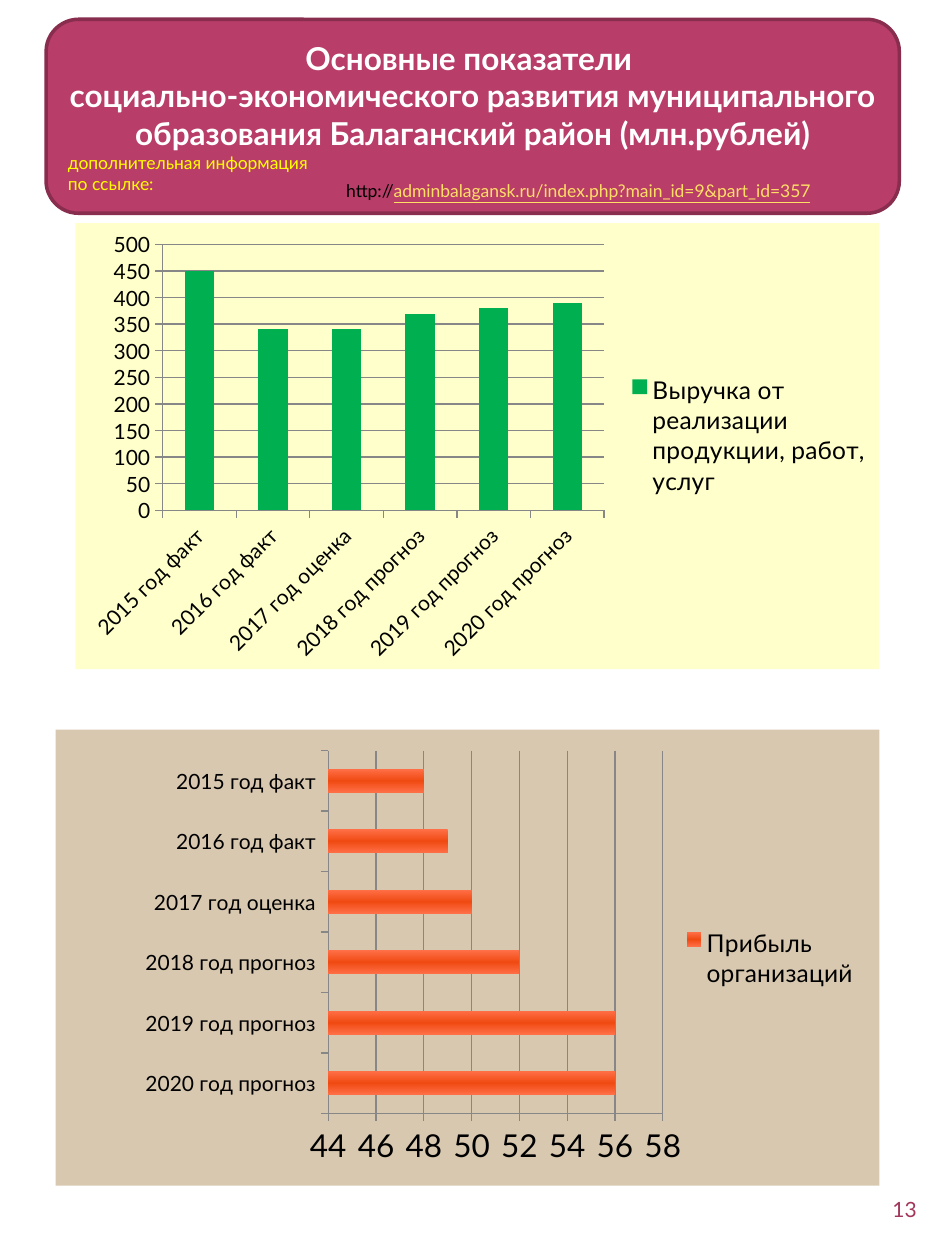
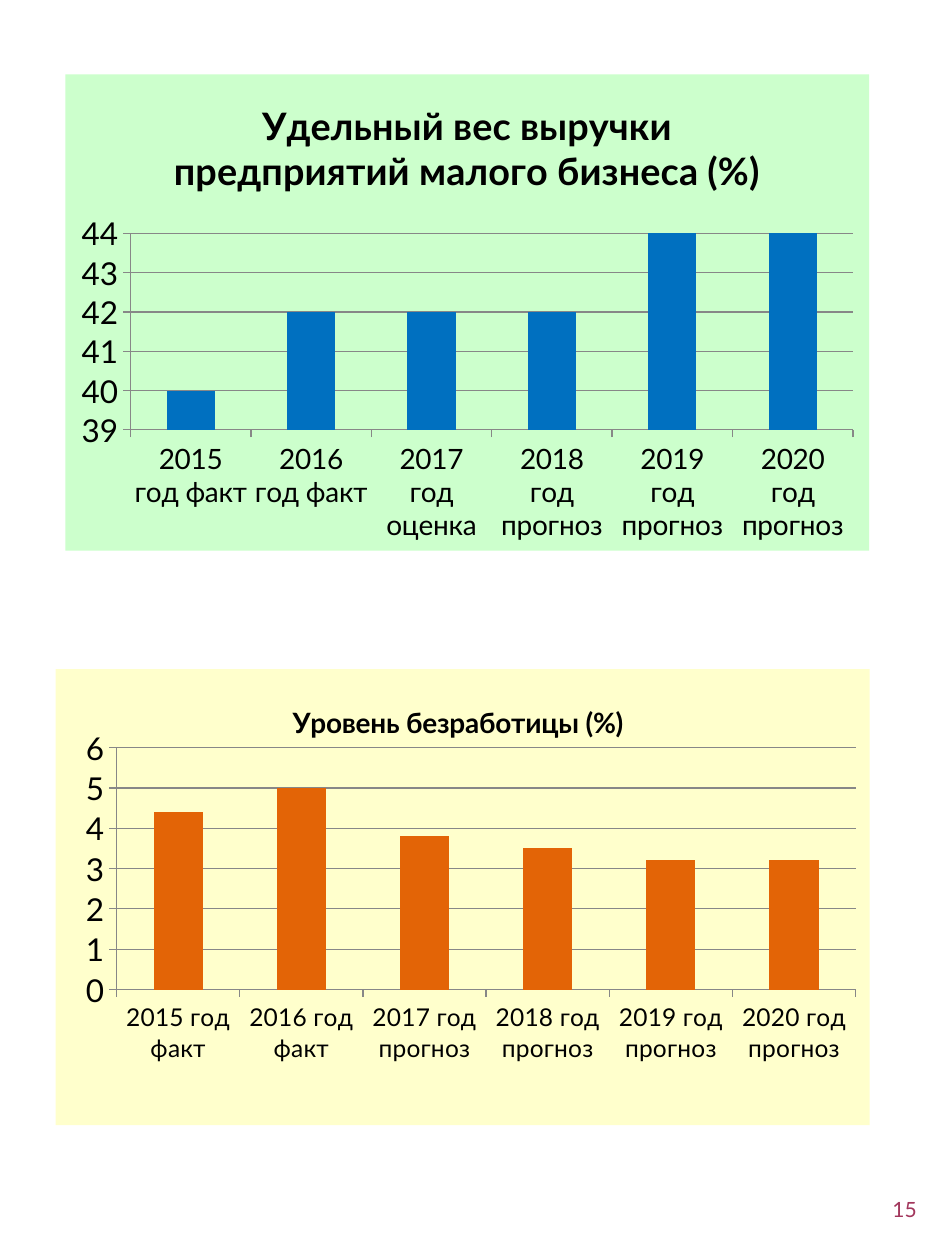
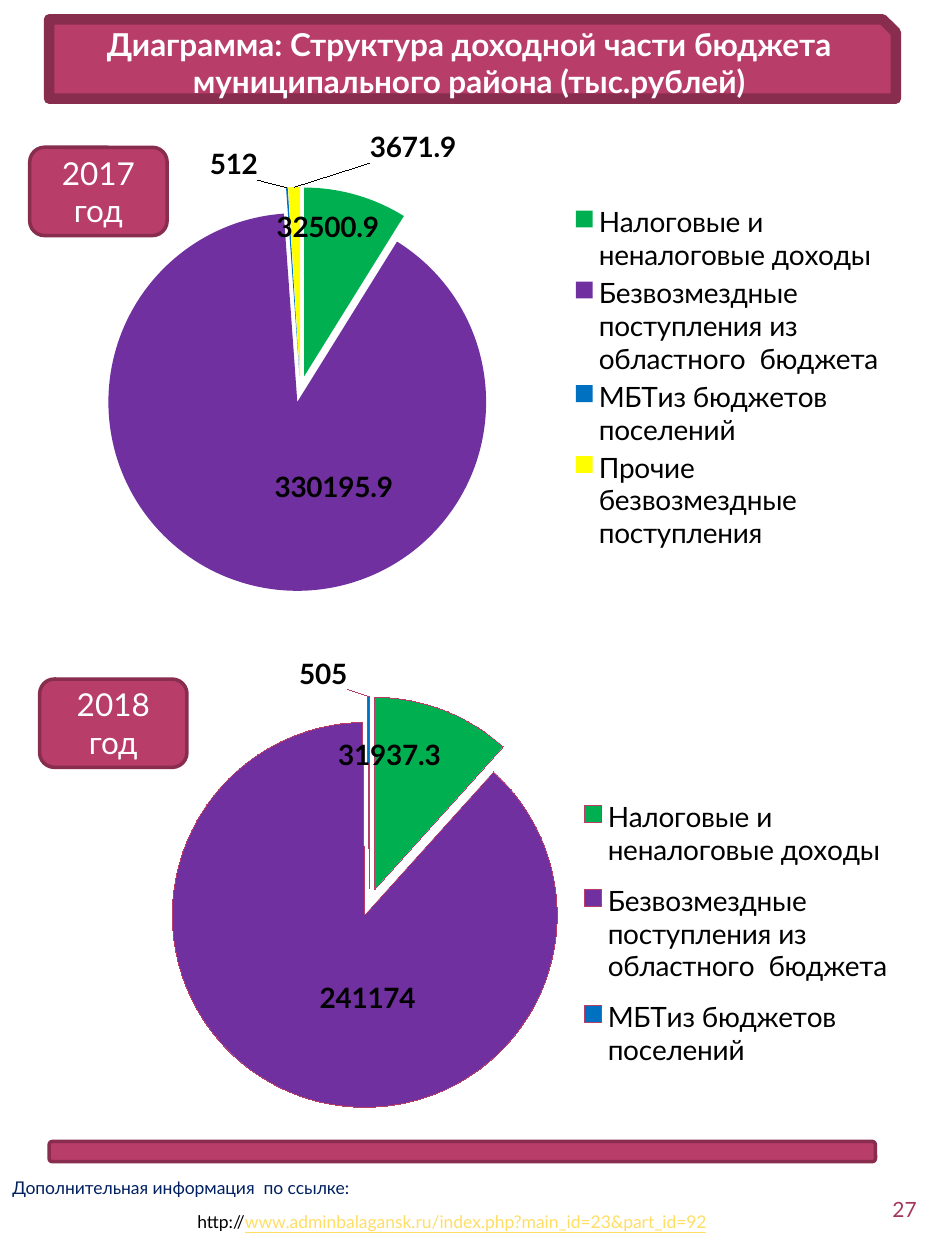
from copy import deepcopy
from dataclasses import dataclass

from lxml.etree import SubElement
from pptx import Presentation
from pptx.chart.data import CategoryChartData
from pptx.dml.color import RGBColor
from pptx.enum.chart import XL_CHART_TYPE as ChartType
from pptx.enum.chart import XL_LABEL_POSITION as LabelPosition
from pptx.enum.chart import XL_LEGEND_POSITION as LegendPosition
from pptx.enum.chart import XL_TICK_MARK as TickMark
from pptx.enum.shapes import MSO_SHAPE as Shape
from pptx.enum.text import MSO_ANCHOR as Anchor
from pptx.enum.text import PP_ALIGN as Align
from pptx.oxml import parse_xml
from pptx.oxml.ns import nsdecls, qn
from pptx.util import Cm, Pt


@dataclass(frozen=True)
class Theme:
    font: str = "Lato"
    berry: str = "B83D68"
    berry_dark: str = "882D4D"
    page_number: str = "A2365C"
    white: str = "FFFFFF"
    black: str = "000000"
    yellow: str = "FFFF00"
    link: str = "FFDE66"
    navy: str = "002060"
    grid: str = "878787"
    green: str = "00B050"
    blue: str = "0070C0"
    purple: str = "7030A0"
    orange: str = "E36406"
    flame: str = "F04A12"
    flame_light: str = "FF7048"
    cream: str = "FFFFCC"
    mint: str = "CCFFCC"
    sand: str = "D8C8B0"
    note_size: float = 10
    small_size: float = 12
    legend_size: float = 14
    label_size: float = 16
    heading_size: float = 18
    title_size: float = 21.6


THEME = Theme()
YEARS = ["2015 год факт", "2016 год факт", "2017 год оценка",
         "2018 год прогноз", "2019 год прогноз", "2020 год прогноз"]
INCOME_SOURCES = ["Налоговые и неналоговые доходы",
                  "Безвозмездные поступления из областного  бюджета",
                  "МБТиз бюджетов поселений",
                  "Прочие безвозмездные поступления"]
INCOME_COLORS = [THEME.green, THEME.purple, THEME.blue, THEME.yellow]


def rgb(color):
    return RGBColor.from_string(color)


def style_font(font, size, color=THEME.black, bold=False, underline=False):
    font.name = THEME.font
    font.size = Pt(size)
    font.bold = bold
    font.color.rgb = rgb(color)
    if underline:
        font.underline = True


def write(paragraph, text, align=Align.LEFT, **font_format):
    paragraph.alignment = align
    run = paragraph.add_run()
    run.text = text
    style_font(run.font, **font_format)


def place(element, index, percents, modes=("xMode", "yMode"), target=None):
    for layout in element.findall(qn("c:layout")):
        element.remove(layout)
    layout = SubElement(element, qn("c:layout"))
    manual = SubElement(layout, qn("c:manualLayout"))
    settings = [("layoutTarget", target)] if target else []
    settings += [(mode, "edge") for mode in modes]
    settings += [(name, f"{percent / 100:.4f}") for name, percent in zip("xywh", percents)]
    for name, value in settings:
        SubElement(manual, qn(f"c:{name}")).set("val", value)
    element.insert(index, layout)


class Deck:
    def __init__(self, theme):
        self.theme = theme
        self.presentation = Presentation()
        self.presentation.slide_width = Cm(19.05)
        self.presentation.slide_height = Cm(25.4)
        self.slide = None

    def add_slide(self, number):
        layout = self.presentation.slide_layouts[6]
        self.slide = self.presentation.slides.add_slide(layout)
        frame = self.text_box(17.16, 23.93, 1.57, 0.91)
        frame.vertical_anchor = Anchor.MIDDLE
        write(frame.paragraphs[0], str(number), align=Align.RIGHT,
              size=self.theme.small_size, color=self.theme.page_number)

    def text_box(self, left, top, width, height):
        box = self.slide.shapes.add_textbox(Cm(left), Cm(top), Cm(width), Cm(height))
        box.text_frame.word_wrap = True
        return box.text_frame

    def note(self, left, top, width, text, color):
        frame = self.text_box(left, top, width, 0.69)
        write(frame.paragraphs[0], text, size=self.theme.note_size, color=color)
        return frame.paragraphs[0]

    def address(self, left, top, width, text):
        paragraph = self.note(left, top, width, "http://", self.theme.black)
        write(paragraph, text, size=self.theme.note_size,
              color=self.theme.link, underline=True)

    def panel(self, left, top, width, height, lines=(), kind=Shape.ROUNDED_RECTANGLE,
              border=2, bold=False):
        shape = self.slide.shapes.add_shape(kind, Cm(left), Cm(top), Cm(width), Cm(height))
        shape.shadow.inherit = False
        shape.fill.solid()
        shape.fill.fore_color.rgb = rgb(self.theme.berry)
        shape.line.color.rgb = rgb(self.theme.berry_dark)
        shape.line.width = Pt(border)
        frame = shape.text_frame
        frame.word_wrap = True
        frame.vertical_anchor = Anchor.MIDDLE
        for index, line in enumerate(lines):
            paragraph = frame.add_paragraph() if index else frame.paragraphs[0]
            write(paragraph, line, align=Align.CENTER, bold=bold,
                  size=self.theme.heading_size, color=self.theme.white)
        return frame

    def chart(self, kind, box, categories, values, plot_box, name="Series 1", title=None,
              title_size=None, title_place=None, legend_size=None, legend_box=None,
              background=None):
        data = CategoryChartData()
        data.categories = categories
        data.add_series(name, values)
        chart = self.slide.shapes.add_chart(kind, *map(Cm, box), data).chart
        style_font(chart.font, self.theme.heading_size)
        chart.has_title = title is not None
        if title:
            write(chart.chart_title.text_frame.paragraphs[0], title,
                  align=Align.CENTER, size=title_size, bold=True)
        if title_place:
            place(chart.chart_title._element, 1, title_place)
        chart.has_legend = legend_size is not None
        if legend_size:
            chart.legend.position = LegendPosition.RIGHT
            chart.legend.include_in_layout = False
            style_font(chart.legend.font, legend_size)
            place(chart.legend._element, 1, legend_box)
        if background:
            properties = parse_xml(
                f'<c:spPr {nsdecls("c", "a")}><a:solidFill><a:srgbClr val="{background}"/>'
                "</a:solidFill><a:ln><a:noFill/></a:ln></c:spPr>")
            chart._chartSpace.find(qn("c:txPr")).addprevious(properties)
        place(chart._chartSpace.find(".//" + qn("c:plotArea")), 0, plot_box, target="inner")
        return chart

    def bars(self, box, categories, values, color, scale, category_size,
             value_size=THEME.heading_size, kind=ChartType.COLUMN_CLUSTERED,
             edge_color=None, rotation=None, **options):
        chart = self.chart(kind, box, categories, values, **options)
        plot = chart.plots[0]
        plot.vary_by_categories = False
        plot.gap_width = 150
        series = plot.series[0]
        if edge_color:
            self.sheen(series, color, edge_color)
        else:
            series.format.fill.solid()
            series.format.fill.fore_color.rgb = rgb(color)
        value_axis, category_axis = chart.value_axis, chart.category_axis
        value_axis.minimum_scale, value_axis.maximum_scale, value_axis.major_unit = scale
        value_axis.has_major_gridlines = True
        value_axis.major_gridlines.format.line.color.rgb = rgb(self.theme.grid)
        for axis, size in ((value_axis, value_size), (category_axis, category_size)):
            axis.major_tick_mark = TickMark.OUTSIDE
            axis.format.line.color.rgb = rgb(self.theme.grid)
            style_font(axis.tick_labels.font, size)
        if rotation:
            body = category_axis._element.find(".//" + qn("a:bodyPr"))
            body.set("rot", str(rotation * 60000))
            body.set("vert", "horz")

    def sheen(self, series, color, edge_color):
        fill = series.format.fill
        fill.gradient()
        fill.gradient_angle = 90
        stops = series._element.find(".//" + qn("a:gsLst"))
        stops.insert(1, deepcopy(stops[0]))
        for stop, position, shade in zip(fill.gradient_stops, (0, 0.5, 1),
                                         (edge_color, color, edge_color)):
            stop.position = position
            stop.color.rgb = rgb(shade)

    def pie(self, box, values, plot_box, legend_box, label_shifts, outline=None):
        chart = self.chart(ChartType.PIE, box, INCOME_SOURCES[:len(values)], values,
                           plot_box, legend_size=self.theme.label_size,
                           legend_box=legend_box)
        chart.plots[0].vary_by_categories = True
        series = chart.plots[0].series[0]
        if outline:
            series.format.line.color.rgb = rgb(outline)
            series.format.line.width = Pt(0.75)
        explosion = parse_xml(f'<c:explosion {nsdecls("c")} val="7"/>')
        series.format._element.get_or_add_spPr().addnext(explosion)
        labels = series.data_labels
        labels.show_value = True
        labels.position = LabelPosition.INSIDE_END
        style_font(labels.font, self.theme.label_size, bold=True)
        for index, (color, shift) in enumerate(zip(INCOME_COLORS, label_shifts)):
            point = series.points[index]
            point.format.fill.solid()
            point.format.fill.fore_color.rgb = rgb(color)
            if outline:
                point.format.line.color.rgb = rgb(outline)
                point.format.line.width = Pt(0)
            label = point.data_label
            style_font(label.font, self.theme.label_size, bold=True)
            label.position = LabelPosition.INSIDE_END
            element = labels._element.findall(qn("c:dLbl"))[index]
            place(element, 1, shift, modes=())


def build_indicators(deck):
    deck.add_slide(13)
    deck.bars((1.52, 4.5, 16.2, 8.99), YEARS, [450, 340, 340, 370, 380, 390],
              THEME.green, (0, 500, 50), THEME.small_size, THEME.small_size,
              rotation=-45, name="Выручка от реализации продукции, работ, услуг",
              legend_size=THEME.legend_size, legend_box=(68.3, 33.5, 31, 28),
              background=THEME.cream, plot_box=(10.85, 4.75, 54.95, 59.65))
    frame = deck.panel(0.93, 0.39, 17.2, 3.91, [
        "Основные показатели ",
        "социально-экономического развития муниципального "
        "образования Балаганский район (млн.рублей)"], bold=True)
    for line in ("дополнительная информация", "по ссылке:"):
        write(frame.add_paragraph(), line, size=THEME.note_size, color=THEME.yellow)
    deck.bars((1.12, 14.71, 16.61, 9.19), YEARS[::-1], [56, 56, 52, 50, 49, 48],
              THEME.flame, (44, 58, 2), THEME.small_size, kind=ChartType.BAR_CLUSTERED,
              edge_color=THEME.flame_light, name="Прибыль организаций",
              legend_size=THEME.legend_size, legend_box=(75.2, 42.5, 23, 15),
              background=THEME.sand, plot_box=(33.1, 4.6, 40.6, 79.6))
    deck.address(6.73, 3.51, 11.3, "adminbalagansk.ru/index.php?main_id=9&part_id=357")


def build_shares(deck):
    deck.add_slide(15)
    deck.bars((1.32, 1.5, 16.2, 9.6), YEARS, [40, 42, 42, 42, 44, 44],
              THEME.blue, (39, 44, 1), THEME.label_size,
              title="Удельный вес выручки предприятий малого бизнеса (%)",
              title_size=THEME.title_size, background=THEME.mint,
              plot_box=(8.1, 33.4, 89.9, 41.25))
    forecast_years = YEARS[:2] + ["2017 год прогноз"] + YEARS[3:]
    deck.bars((1.12, 13.49, 16.41, 9.19), forecast_years, [4.4, 5, 3.8, 3.5, 3.2, 3.2],
              THEME.orange, (0, 6, 1), THEME.legend_size,
              title="Уровень безработицы (%)", title_size=THEME.label_size,
              title_place=(28.5, 6.2), background=THEME.cream,
              plot_box=(7.5, 17.2, 90.8, 53.1))


def build_income(deck):
    deck.add_slide(27)
    deck.pie((1.19, 2.39, 16.87, 11.71), [32500.9, 330195.9, 512, 3671.9],
             (4.7, 11.8, 48.3, 69.6), (60.6, 14, 38.5, 61),
             [(3, 1.3), (2.5, -13), (-6.4, -8.2), (14.2, -11.1)])
    deck.panel(0.99, 0.39, 17.07, 1.6, [
        "Диаграмма: Структура доходной части бюджета муниципального района (тыс.рублей)"],
        kind=Shape.SNIP_1_RECTANGLE, border=6, bold=True)
    deck.pie((1.98, 13.11, 16.28, 11.51), [31937.3, 241174, 505],
             (8.1, 5, 51, 78.3), (59, 23, 40, 53),
             [(0, 3.7), (2.5, -13.1), (-5.6, -8.3)], outline=THEME.berry)
    deck.panel(0.6, 2.97, 2.77, 1.78, ["2017 год"])
    deck.panel(0.8, 13.69, 2.97, 1.78, ["2018 год"])
    deck.panel(0.99, 23.01, 16.66, 0.41)
    deck.note(0, 23.6, 9.53, "Дополнительная информация  по ссылке:", THEME.navy)
    deck.address(3.73, 24.28, 11.81, "www.adminbalagansk.ru/index.php?main_id=23&part_id=92")


def main():
    deck = Deck(THEME)
    build_indicators(deck)
    build_shares(deck)
    build_income(deck)
    deck.presentation.save("out.pptx")


if __name__ == "__main__":
    main()
